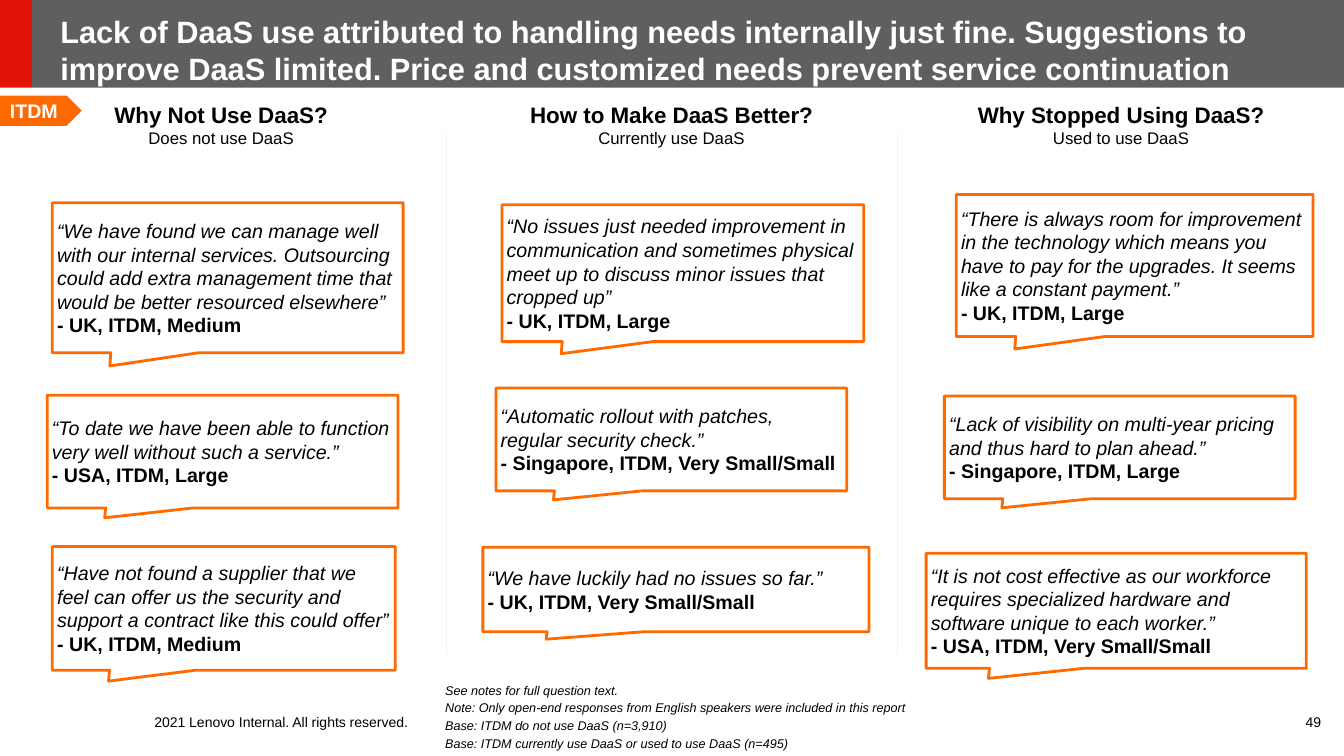
from lxml import etree
from pptx import Presentation
from pptx.dml.color import RGBColor
from pptx.enum.shapes import MSO_CONNECTOR, MSO_SHAPE
from pptx.enum.text import MSO_ANCHOR, MSO_AUTO_SIZE, PP_ALIGN
from pptx.oxml.ns import qn
from pptx.util import Cm, Pt

RECTANGLE = MSO_SHAPE.RECTANGLE
PENTAGON = MSO_SHAPE.PENTAGON
CALLOUT = MSO_SHAPE.RECTANGULAR_CALLOUT
STRAIGHT = MSO_CONNECTOR.STRAIGHT
TOP, MIDDLE, BOTTOM = MSO_ANCHOR.TOP, MSO_ANCHOR.MIDDLE, MSO_ANCHOR.BOTTOM
LEFT, CENTER = PP_ALIGN.LEFT, PP_ALIGN.CENTER

FONT = "Arial"
COLORS = {
    "band": "5F5F5F",
    "red": "E1140A",
    "orange": "FF6A00",
    "divider": "F2F2F2",
    "black": "000000",
    "white": "FFFFFF",
}

TITLE = (
    "Lack of DaaS use attributed to handling needs internally just fine. "
    "Suggestions to improve DaaS limited. Price and customized needs prevent "
    "service continuation"
)
NOTES = [
    "See notes for full question text.",
    "Note: Only open-end responses from English speakers were included in this report",
    "Base: ITDM do not use DaaS (n=3,910)",
    "Base: ITDM currently use DaaS or used to use DaaS (n=495)",
]
HEADINGS = [
    (1.32, "Why Not Use DaaS?", "Does not use DaaS"),
    (12.67, "How to Make DaaS Better?", "Currently use DaaS"),
    (24, "Why Stopped Using DaaS?", "Used to use DaaS"),
]
DIVIDERS = [11.25, 22.61]
# Left, top, width and height in centimetres, then quote and respondent
QUOTES = [
    ((1.32, 5.11, 8.84, 3.78),
     "“We have found we can manage well with our internal services. Outsourcing "
     "could add extra management time that would be better resourced elsewhere”",
     "- UK, ITDM, Medium"),
    ((1.19, 9.96, 8.84, 2.84),
     "“To date we have been able to function very well without such a service.”",
     "- USA, ITDM, Large"),
    ((1.32, 13.77, 8.64, 3.12),
     "“Have not found a supplier that we feel can offer us the security and "
     "support a contract like this could offer”",
     "- UK, ITDM, Medium"),
    ((12.65, 5.16, 9.12, 3.45),
     "“No issues just needed improvement in communication and sometimes physical "
     "meet up to discuss minor issues that cropped up”",
     "- UK, ITDM, Large"),
    ((12.5, 9.78, 8.84, 2.59),
     "“Automatic rollout with patches,\vregular security check.”",
     "- Singapore, ITDM, Very Small/Small"),
    ((12.17, 13.79, 9.73, 2.13),
     "“We have luckily had no issues so far.”",
     "- UK, ITDM, Very Small/Small"),
    ((24.1, 4.9, 8.99, 3.58),
     "“There is always room for improvement in the technology which means you "
     "have to pay for the upgrades. It seems like a constant payment.”",
     "- UK, ITDM, Large"),
    ((23.8, 9.98, 8.84, 2.59),
     "“Lack of visibility on multi-year pricing and thus hard to plan ahead.”",
     "- Singapore, ITDM, Large"),
    ((23.34, 13.94, 9.58, 2.9),
     "“It is not cost effective as our workforce requires specialized hardware "
     "and software unique to each worker.”",
     "- USA, ITDM, Very Small/Small"),
]


def color(name):
    return RGBColor.from_string(COLORS[name])


def lengths(box):
    return [Cm(value) for value in box]


def place(shape, box):
    shape.left, shape.top, shape.width, shape.height = lengths(box)


def set_frame(shape, anchor, inset_x, inset_y):
    frame = shape.text_frame
    frame.word_wrap = True
    frame.auto_size = MSO_AUTO_SIZE.NONE
    frame.vertical_anchor = anchor
    frame.margin_left = frame.margin_right = Cm(inset_x)
    frame.margin_top = frame.margin_bottom = Cm(inset_y)
    return frame


def format_paragraph(paragraph, size, color_name="black", bold=False, italic=False, align=LEFT):
    paragraph.alignment = align
    font = paragraph.font
    font.name = FONT
    font.size = Pt(size)
    font.bold = bold
    font.italic = italic
    font.color.rgb = color(color_name)


def add_filled_shape(slide, kind, box, fill):
    shape = slide.shapes.add_shape(kind, *lengths(box))
    shape.shadow.inherit = False
    shape.fill.solid()
    shape.fill.fore_color.rgb = color(fill)
    shape.line.fill.background()
    return shape


def add_header(slide):
    bars = [
        add_filled_shape(slide, RECTANGLE, (0.81, 0, 33.06, 2.21), "band"),
        add_filled_shape(slide, RECTANGLE, (0, 0, 0.81, 2.21), "red"),
    ]
    for bar in bars:  # behind the title
        slide.shapes._spTree.insert(2, bar._element)
    title = slide.shapes.title
    place(title, (1.52, 0.46, 31.57, 1.57))
    frame = set_frame(title, MIDDLE, 0, 0)
    frame.text = TITLE
    format_paragraph(frame.paragraphs[0], 22, "white", bold=True)


def add_notes(slide):
    body = slide.placeholders[1]
    place(body, (10.97, 17.48, 18.77, 1.57))
    frame = set_frame(body, BOTTOM, 0.25, 0.13)
    frame.text = "\n".join(NOTES)
    for index, paragraph in enumerate(frame.paragraphs):
        properties = paragraph._p.get_or_add_pPr()
        properties.set("marL", "0")
        properties.set("indent", "0")
        etree.SubElement(properties, qn("a:buNone"))
        paragraph.space_before = Pt(1.8 if index else 0)
        format_paragraph(paragraph, 9, italic=True)


def add_label(slide, box, text, align=LEFT):
    label = slide.shapes.add_textbox(*lengths(box))
    frame = set_frame(label, MIDDLE, 0, 0)
    frame.text = text
    format_paragraph(frame.paragraphs[0], 10, align=align)


def add_heading(slide, left, question, audience):
    heading = slide.shapes.add_textbox(*lengths((left, 2.41, 8.51, 1.45)))
    frame = set_frame(heading, TOP, 0.25, 0.13)
    frame.text = f"{question}\n{audience}"
    format_paragraph(frame.paragraphs[0], 16, bold=True, align=CENTER)
    format_paragraph(frame.paragraphs[1], 12, align=CENTER)


def add_audience_tag(slide):
    tag = add_filled_shape(slide, PENTAGON, (0, 2.41, 2.06, 0.76), "orange")
    frame = set_frame(tag, MIDDLE, 0.25, 0.13)
    frame.word_wrap = False
    frame.text = "ITDM"
    format_paragraph(frame.paragraphs[0], 14, "white", bold=True)


def add_divider(slide, left):
    line = slide.shapes.add_connector(STRAIGHT, *lengths((left, 3.35, left, 16.51)))
    line.line.color.rgb = color("divider")
    line.line.width = Pt(0.75)
    etree.SubElement(line._element.spPr, qn("a:effectLst"))


def add_quote(slide, box, quote, respondent):
    callout = slide.shapes.add_shape(CALLOUT, *lengths(box))
    callout.shadow.inherit = False
    callout.adjustments[0] = -0.336
    callout.adjustments[1] = 0.588
    callout.fill.background()
    callout.line.color.rgb = color("orange")
    callout.line.width = Pt(2)
    frame = set_frame(callout, MIDDLE, 0.12, 0.12)
    frame.text = f"{quote}\n{respondent}"
    format_paragraph(frame.paragraphs[0], 14, italic=True)
    format_paragraph(frame.paragraphs[1], 14, bold=True)


def main():
    presentation = Presentation()
    presentation.slide_width, presentation.slide_height = Cm(33.87), Cm(19.05)
    slide = presentation.slides.add_slide(presentation.slide_layouts[1])
    add_header(slide)
    add_notes(slide)
    add_label(slide, (3.89, 17.98, 6.71, 0.43), "2021 Lenovo Internal. All rights reserved.")
    add_label(slide, (32.49, 17.98, 1.22, 0.43), "49", CENTER)
    for heading in HEADINGS:
        add_heading(slide, *heading)
    add_audience_tag(slide)
    for left in DIVIDERS:
        add_divider(slide, left)
    for quote in QUOTES:
        add_quote(slide, *quote)
    presentation.save("out.pptx")


if __name__ == "__main__":
    main()
